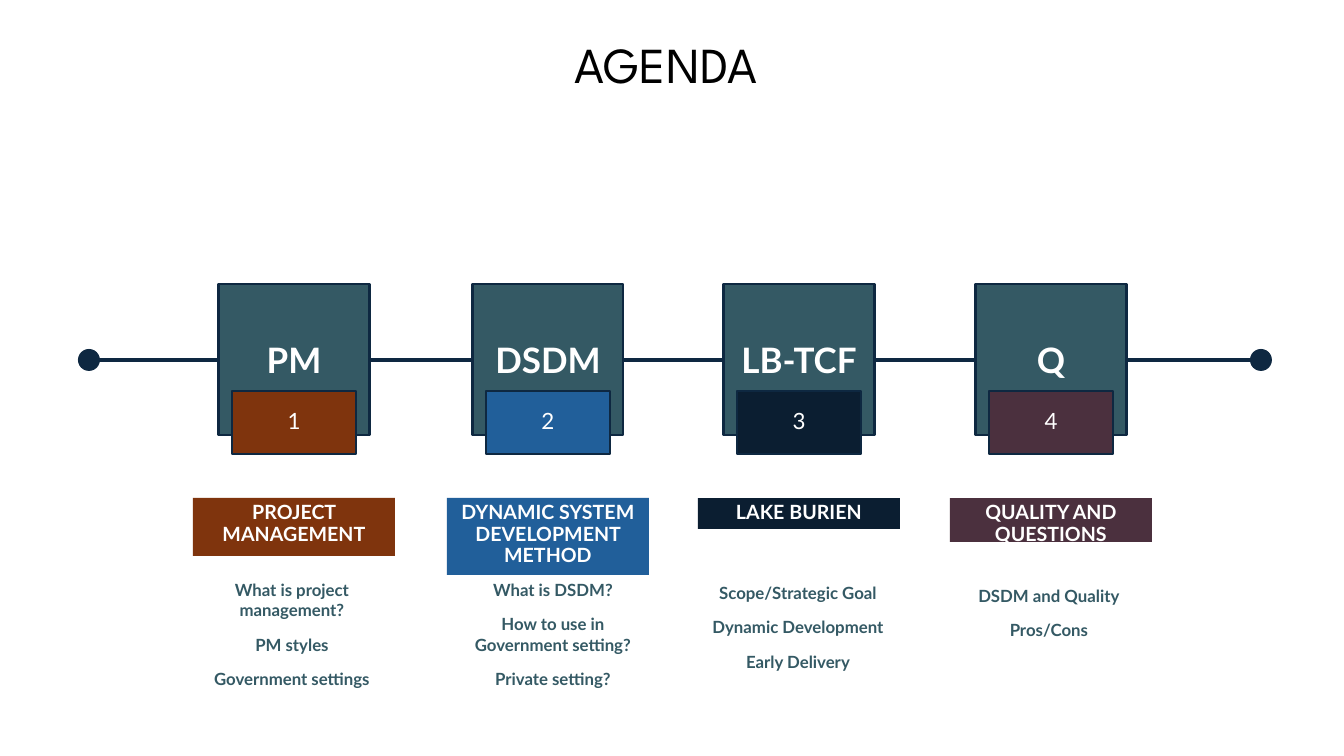
from pptx import Presentation
from pptx.dml.color import RGBColor
from pptx.enum.shapes import MSO_CONNECTOR, MSO_SHAPE
from pptx.enum.text import MSO_ANCHOR, PP_ALIGN
from pptx.oxml.ns import qn
from pptx.util import Pt

EMU_PER_PX = 914400 / 100.8
RECTANGLE = MSO_SHAPE.RECTANGLE
OVAL = MSO_SHAPE.OVAL
STRAIGHT = MSO_CONNECTOR.STRAIGHT
CENTER = PP_ALIGN.CENTER
TOP = MSO_ANCHOR.TOP
MIDDLE = MSO_ANCHOR.MIDDLE

NAVY = "0E2841"
TEAL = "345964"
WHITE = "FFFFFF"
AXIS_Y = 360

TITLE_TEXT = {"name": "League Spartan", "size": Pt(36), "color": "000000"}
CODE_TEXT = {"name": "Lato", "size": Pt(25), "bold": True, "color": WHITE}
NUMBER_TEXT = {"name": "Lato", "size": Pt(16), "color": WHITE}
LABEL_TEXT = {"name": "Lato", "size": Pt(14), "bold": True, "color": WHITE}
ITEM_TEXT = {"name": "Lato", "size": Pt(12), "bold": True, "color": TEAL}

TIGHT = {"alignment": CENTER, "line_spacing": 0.9, "space_before": Pt(10)}
LOOSE = {"alignment": CENTER, "space_before": Pt(10)}

TOPICS = [
    {"center": 294, "code": "PM", "color": "7F340D",
     "label": "PROJECT MANAGEMENT", "label_height": 58,
     "items_center": 292, "items_top": 575, "items_width": 202,
     "items": ["What is project management?", "PM styles", "Government settings"]},
    {"center": 548, "code": "DSDM", "color": "215F9A",
     "label": "DYNAMIC SYSTEM DEVELOPMENT METHOD", "label_height": 77,
     "items_center": 553, "items_top": 575, "items_width": 202,
     "items": ["What is DSDM?", "How to use in Government setting?", "Private setting?"]},
    {"center": 799, "code": "LB-TCF", "color": "0B1E31",
     "label": "LAKE BURIEN", "label_height": 31,
     "items_center": 798, "items_top": 578, "items_width": 223,
     "items": ["Scope/Strategic Goal", "Dynamic Development", "Early Delivery"]},
    {"center": 1051, "code": "Q", "color": "4B303E",
     "label": "QUALITY AND QUESTIONS", "label_height": 44,
     "items_center": 1049, "items_top": 581, "items_width": 202,
     "items": ["DSDM and Quality", "Pros/Cons"]},
]


def px(length):
    return round(length * EMU_PER_PX)


def paint(color_format, color):
    color_format.rgb = RGBColor.from_string(color)


def apply(target, values):
    for name, value in values.items():
        if name == "color":
            paint(target.color, value)
        else:
            setattr(target, name, value)


def write(box, lines, text_format, para_format, frame_format):
    frame = box.text_frame
    apply(frame, {"word_wrap": True, **frame_format})
    for index, line in enumerate(lines):
        para = frame.add_paragraph() if index else frame.paragraphs[0]
        apply(para, para_format)
        span = para.add_run()
        span.text = line
        apply(span.font, text_format)


def add_block(page, kind, center, top, width, height, fill, outlined=False):
    block = page.shapes.add_shape(
        kind, px(center - width / 2), px(top), px(width), px(height))
    block.shadow.inherit = False
    block.fill.solid()
    paint(block.fill.fore_color, fill)
    if outlined:
        apply(block.line, {"color": NAVY, "width": Pt(1.5)})
    else:
        block.line.fill.background()
    return block


def add_text(page, center, top, width, height, lines, text_format, para_format, anchor):
    box = page.shapes.add_textbox(
        px(center - width / 2), px(top), px(width), px(height))
    write(box, lines, text_format, para_format, {"vertical_anchor": anchor})


def add_timeline(page, start, end):
    line = page.shapes.add_connector(
        STRAIGHT, px(start), px(AXIS_Y), px(end), px(AXIS_Y))
    apply(line.line, {"color": NAVY, "width": Pt(3.25)})
    properties = line._element.spPr
    properties.append(properties.makeelement(qn("a:effectLst"), {}))
    for center in (start, end):
        add_block(page, OVAL, center, AXIS_Y - 11, 22, 22, NAVY)


def add_topic(page, number, topic):
    center, color = topic["center"], topic["color"]
    square = add_block(page, RECTANGLE, center, 284, 151, 151, TEAL, True)
    write(square, [topic["code"]], CODE_TEXT, TIGHT,
          {"vertical_anchor": MIDDLE, "margin_left": 0, "margin_right": 0,
           "margin_top": px(10), "margin_bottom": px(5)})
    badge = add_block(page, RECTANGLE, center, 391, 124, 63, color, True)
    write(badge, [str(number)], NUMBER_TEXT, TIGHT, {"vertical_anchor": MIDDLE})
    label = add_block(page, RECTANGLE, center, 498, 202, topic["label_height"], color)
    write(label, [topic["label"]], LABEL_TEXT, TIGHT, {"vertical_anchor": TOP})
    add_text(page, topic["items_center"], topic["items_top"], topic["items_width"], 68,
             topic["items"], ITEM_TEXT, LOOSE, TOP)


def main():
    deck = Presentation()
    deck.slide_width, deck.slide_height = px(1344), px(756)
    page = deck.slides.add_slide(deck.slide_layouts[6])
    add_timeline(page, 89, 1261)
    add_text(page, 666, 28, 1173, 79, ["AGENDA"], TITLE_TEXT,
             {"alignment": CENTER, "line_spacing": 0.9}, MIDDLE)
    for number, topic in enumerate(TOPICS, start=1):
        add_topic(page, number, topic)
    deck.save("out.pptx")


if __name__ == "__main__":
    main()
